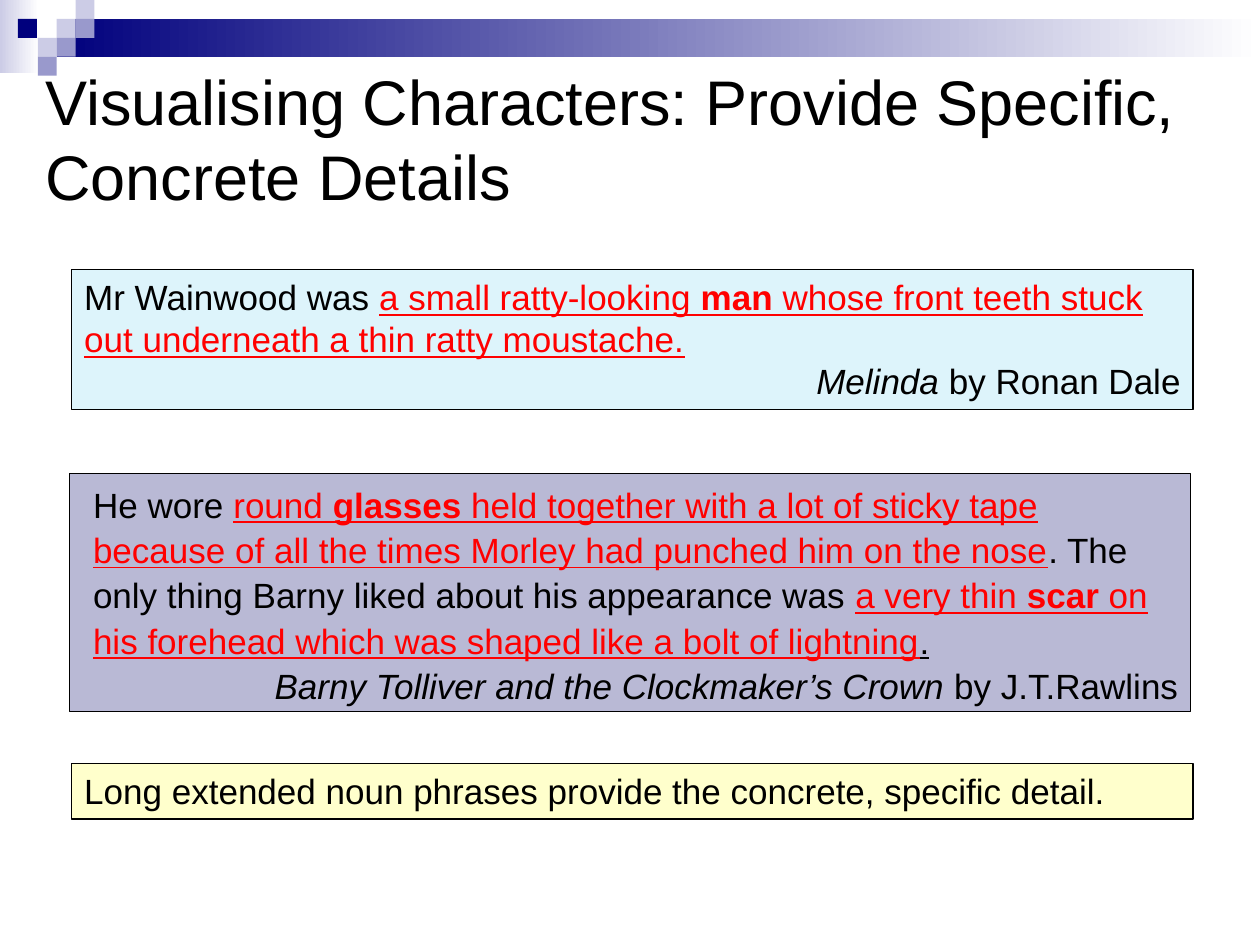
from pptx import Presentation
from pptx.dml.color import RGBColor
from pptx.enum.shapes import MSO_SHAPE
from pptx.enum.text import MSO_ANCHOR, MSO_AUTO_SIZE, PP_ALIGN
from pptx.util import Inches, Pt

RECT = MSO_SHAPE.RECTANGLE
LEFT, RIGHT = PP_ALIGN.LEFT, PP_ALIGN.RIGHT
TOP, MIDDLE = MSO_ANCHOR.TOP, MSO_ANCHOR.MIDDLE
NO_FIT, GROW = MSO_AUTO_SIZE.NONE, MSO_AUTO_SIZE.SHAPE_TO_FIT_TEXT

FONT = "Arial"
UNIT = 0.15  # side of one square in the header mosaic
BOX_LEFT, BOX_WIDTH = 0.57, 8.9
COLORS = {
    "navy": "00007D", "lilac": "9999CC", "pale": "CCCCE6", "white": "FFFFFF",
    "text": "000000", "detail": "FF0000",
    "blue_box": "DDF4FB", "purple_box": "B9B9D5", "yellow_box": "FFFFCC",
}
# (column, row, colour) of the mosaic squares
SQUARES = [
    (3, 1, "pale"), (4, 0, "pale"), (4, 1, "lilac"), (2, 2, "pale"),
    (0.95, 1, "navy"), (3, 2, "lilac"), (2, 3, "lilac"),
]

# Runs are (text, style): d = detail colour, u = underline, b = bold, i = italic
MOUSTACHE = [
    ("Mr Wainwood was ", ""),
    ("a small ratty-looking ", "du"), ("man", "dub"),
    (" whose front teeth stuck out underneath a thin ratty moustache.", "du"),
]
MOUSTACHE_SOURCE = [("Melinda", "i"), (" by Ronan Dale", "")]
GLASSES = [
    ("He wore ", ""),
    ("round ", "du"), ("glasses", "dub"),
    (" held together with a lot of sticky tape because of all the times "
     "Morley had punched him on the nose", "du"),
    (". The only thing Barny liked about his appearance was ", ""),
    ("a very thin ", "du"), ("scar", "dub"),
    (" on his forehead which was shaped like a bolt of lightning", "du"),
    (".", "u"),
]
GLASSES_SOURCE = [("Barny Tolliver and the Clockmaker’s Crown", "i"),
                  (" by J.T.Rawlins", "")]
SUMMARY = [("Long extended noun phrases provide the concrete, specific detail.", "")]


def rgb(name):
    return RGBColor.from_string(COLORS[name])


def add_rect(slide, left, top, width, height):
    sp = slide.shapes.add_shape(RECT, Inches(left), Inches(top),
                                Inches(width), Inches(height))
    sp.shadow.inherit = False
    sp.line.fill.background()
    return sp


def add_fade(slide, left, top, width, height, color):
    """Add a rectangle that fades from color to white, left to right."""
    fill = add_rect(slide, left, top, width, height).fill
    fill.gradient()
    fill.gradient_angle = 0
    for stop, name in zip(fill.gradient_stops, (color, "white")):
        stop.color.rgb = rgb(name)


def add_header(slide):
    add_fade(slide, 0, 0, 0.31, 0.58, "pale")
    add_fade(slide, 3 * UNIT, UNIT, 10 - 3 * UNIT, 2 * UNIT, "navy")
    for col, row, color in SQUARES:
        sp = add_rect(slide, col * UNIT, row * UNIT, UNIT, UNIT)
        sp.fill.solid()
        sp.fill.fore_color.rgb = rgb(color)


def set_title(slide, text):
    title = slide.shapes.title
    title.left, title.top = Inches(0.26), Inches(0.54)
    title.width, title.height = Inches(9.54), Inches(1.11)
    tf = title.text_frame
    tf.text = text
    tf.auto_size = NO_FIT
    tf.vertical_anchor = MIDDLE
    p = tf.paragraphs[0]
    p.alignment = LEFT
    p.font.name, p.font.size = FONT, Pt(36)
    p.font.color.rgb = rgb("text")


def fill_paragraph(p, runs, alignment):
    p.alignment = alignment
    p.font.name, p.font.size = FONT, Pt(20)
    for text, style in runs:
        r = p.add_run()
        r.text = text
        r.font.name, r.font.size = FONT, Pt(20)
        r.font.color.rgb = rgb("detail" if "d" in style else "text")
        r.font.underline = "u" in style
        r.font.bold = "b" in style
        r.font.italic = "i" in style


def add_quote(slide, top, height, color, quote, source=None,
              left=BOX_LEFT, spacing=None, indent=0):
    """Add a bordered box with a quote and, right-aligned, its source."""
    sp = add_rect(slide, left, top, BOX_WIDTH, height)
    sp.fill.solid()
    sp.fill.fore_color.rgb = rgb(color)
    sp.line.color.rgb = rgb("text")
    sp.line.width = Pt(0.75)
    tf = sp.text_frame
    tf.word_wrap = True
    tf.auto_size = GROW
    tf.vertical_anchor = TOP
    fill_paragraph(tf.paragraphs[0], quote, LEFT)
    if source:
        fill_paragraph(tf.add_paragraph(), source, RIGHT)
    for p in tf.paragraphs:
        if spacing:
            p.line_spacing = Pt(spacing)
        if indent:
            p._p.get_or_add_pPr().set("marL", str(Inches(indent)))


def main():
    prs = Presentation()
    prs.slide_width, prs.slide_height = Inches(10), Inches(7.5)
    slide = prs.slides.add_slide(prs.slide_layouts[5])
    add_header(slide)
    set_title(slide, "Visualising Characters: Provide Specific, Concrete Details")
    add_quote(slide, 3.76, 1.89, "purple_box", GLASSES, GLASSES_SOURCE,
              left=0.55, spacing=25.9, indent=0.09)
    add_quote(slide, 2.14, 1.11, "blue_box", MOUSTACHE, MOUSTACHE_SOURCE)
    add_quote(slide, 6.06, 0.44, "yellow_box", SUMMARY)
    prs.save("out.pptx")


if __name__ == "__main__":
    main()
